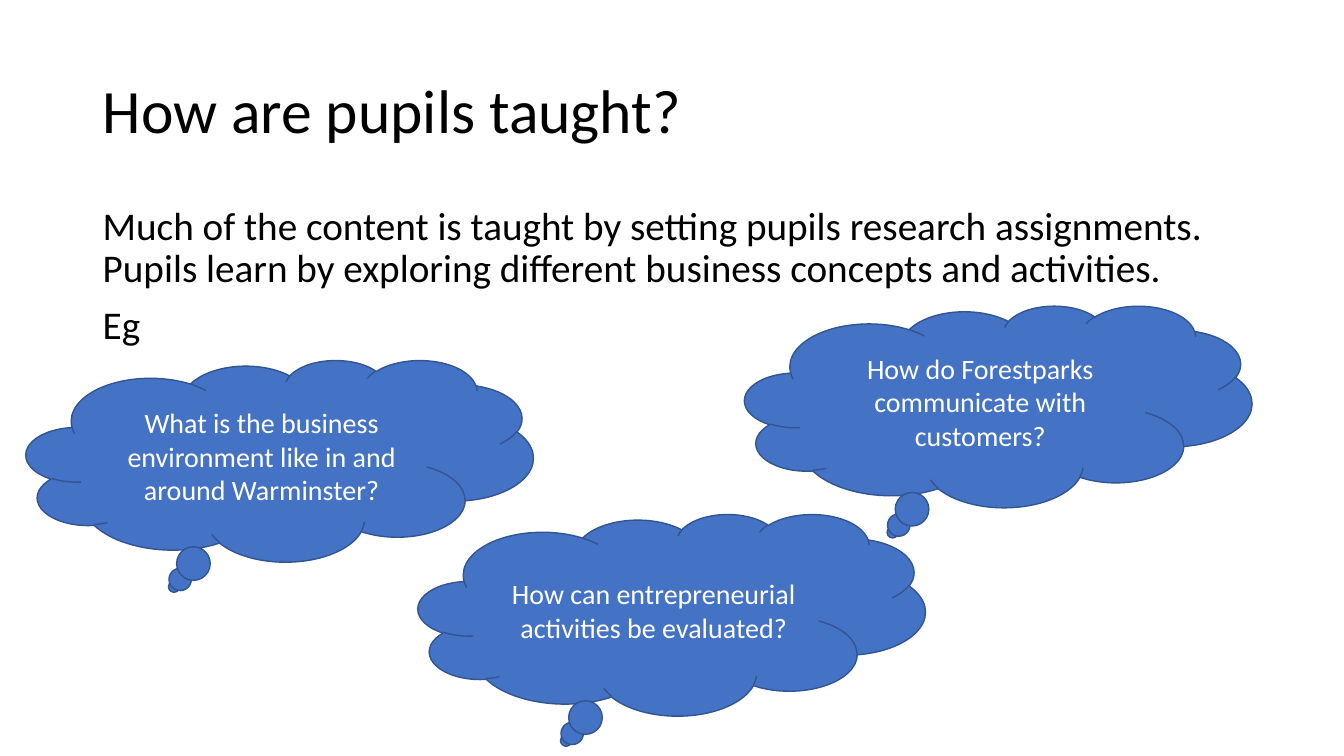
"""Build a slide on how pupils are taught, with three thought clouds."""
from dataclasses import dataclass

from pptx import Presentation
from pptx.dml.color import RGBColor
from pptx.enum.shapes import MSO_SHAPE
from pptx.enum.text import MSO_ANCHOR, PP_ALIGN
from pptx.util import Cm, Pt

TITLE = "How are pupils taught?"
BODY = [
    "Much of the content is taught by setting pupils research assignments. "
    "Pupils learn by exploring different business concepts and activities.",
    "Eg",
]
CLOUDS = [
    ("What is the business environment like in and around Warminster?", 0.66, 9.07),
    ("How do Forestparks communicate with customers?", 18.77, 7.7),
    ("How can entrepreneurial activities be evaluated?", 10.54, 12.95),
]
CLOUD_SIZE = (12.78, 5.08)
MARGIN, TEXT_WIDTH = 2.34, 29.21


@dataclass(frozen=True)
class Theme:
    """Colours, font and type sizes of the slide."""
    font: str = "Calibri"
    ink: RGBColor = RGBColor(0, 0, 0)
    cloud: RGBColor = RGBColor(0x44, 0x72, 0xC4)
    outline: RGBColor = RGBColor(0x32, 0x54, 0x91)
    cloud_ink: RGBColor = RGBColor(255, 255, 255)
    title_size: int = 44
    body_size: int = 28
    cloud_size: int = 20


THEME = Theme()


def write(frame, lines, size, colour, anchor, **paragraph_format):
    """Fill a text frame and format its paragraphs and runs."""
    frame.word_wrap = True
    frame.vertical_anchor = anchor
    frame.text = "\n".join(lines)
    for paragraph in frame.paragraphs:
        for name, value in paragraph_format.items():
            setattr(paragraph, name, value)
        for span in paragraph.runs:
            span.font.name = THEME.font
            span.font.size = Pt(size)
            span.font.color.rgb = colour


def add_text(page, lines, top, height, size, anchor, space_before):
    """Add a text box across the text column."""
    box = page.shapes.add_textbox(Cm(MARGIN), Cm(top), Cm(TEXT_WIDTH), Cm(height))
    write(box.text_frame, lines, size, THEME.ink, anchor,
          line_spacing=0.9, space_before=Pt(space_before))


def add_cloud(page, question, left, top):
    """Add a thought cloud holding one question."""
    width, height = CLOUD_SIZE
    cloud = page.shapes.add_shape(MSO_SHAPE.CLOUD_CALLOUT,
                                  Cm(left), Cm(top), Cm(width), Cm(height))
    cloud.shadow.inherit = False
    cloud.fill.solid()
    cloud.fill.fore_color.rgb = THEME.cloud
    cloud.line.color.rgb = THEME.outline
    cloud.line.width = Pt(1)
    write(cloud.text_frame, [question], THEME.cloud_size, THEME.cloud_ink,
          MSO_ANCHOR.MIDDLE, alignment=PP_ALIGN.CENTER)


def main():
    """Build and save the deck."""
    deck = Presentation()
    deck.slide_width, deck.slide_height = Cm(33.87), Cm(19.05)
    page = deck.slides.add_slide(deck.slide_layouts[6])
    add_text(page, [TITLE], 1.02, 3.68, THEME.title_size, MSO_ANCHOR.MIDDLE, 0)
    add_text(page, BODY, 5.08, 12.09, THEME.body_size, MSO_ANCHOR.TOP, 10)
    for question, left, top in CLOUDS:
        add_cloud(page, question, left, top)
    deck.save("out.pptx")


if __name__ == "__main__":
    main()
